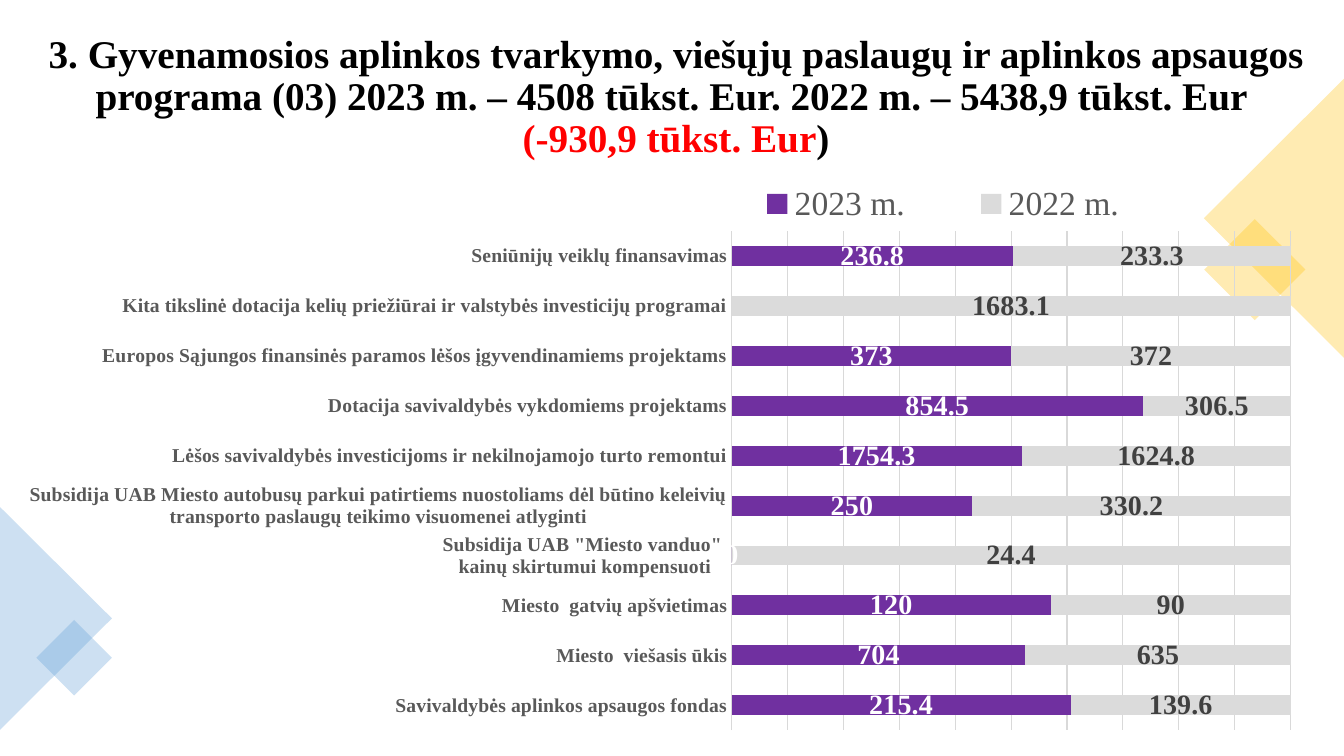
import pptx
import pptx.chart.data
import pptx.dml.color
import pptx.enum.chart
import pptx.enum.shapes
import pptx.enum.text
import pptx.oxml
import pptx.oxml.ns
import pptx.util
from pptx.util import Inches

FACE = "Times New Roman"
GOLD, BLUE = "FFC000", "5B9BD5"
GRID, GREY = "D9D9D9", "595959"
SHAPE = pptx.enum.shapes.MSO_SHAPE

# category, 2023, 2022, from the bottom bar up
ROWS = [
    ("Savivaldybės aplinkos apsaugos fondas", 215.4, 139.6),
    ("Miesto  viešasis ūkis", 704, 635),
    ("Miesto  gatvių apšvietimas", 120, 90),
    ('Subsidija UAB "Miesto vanduo" \nkainų skirtumui kompensuoti', 0, 24.4),
    ("Subsidija UAB Miesto autobusų parkui patirtiems nuostoliams dėl būtino "
     "keleivių transporto paslaugų teikimo visuomenei atlyginti", 250, 330.2),
    ("Lėšos savivaldybės investicijoms ir nekilnojamojo turto remontui",
     1754.3, 1624.8),
    ("Dotacija savivaldybės vykdomiems projektams", 854.5, 306.5),
    ("Europos Sąjungos finansinės paramos lėšos įgyvendinamiems projektams",
     373, 372),
    ("Kita tikslinė dotacija kelių priežiūrai ir valstybės investicijų programai",
     None, 1683.1),
    ("Seniūnijų veiklų finansavimas", 236.8, 233.3),
]
# name, bar colour, label colour
YEARS = [("2023 m. ", "7030A0", "FFFFFF"), ("2022 m. ", "DBDBDB", "404040")]

# shape, left, top, width, height, rotation, colour
DECOR = [
    (SHAPE.RECTANGLE, 12.09, 2.32, 0.71, 0.71, 45, GOLD),
    (SHAPE.ISOSCELES_TRIANGLE, 11.25, 1.47, 2.77, 1.39, 270, GOLD),
    (SHAPE.ISOSCELES_TRIANGLE, -0.55, 5.58, 2.21, 1.11, 90, BLUE),
    (SHAPE.RECTANGLE, 0.47, 6.26, 0.53, 0.53, 45, BLUE),
]


def rgb(code):
    return pptx.dml.color.RGBColor.from_string(code)


def style(font, size, color, bold=False):
    font.name, font.size, font.bold = FACE, pptx.util.Pt(size), bold
    font.color.rgb = rgb(color)


def write(para, text, size=28, color="000000", bold=True):
    run = para.add_run()
    run.text = text
    style(run.font, size, color, bold)


def add_title(slide):
    title = slide.shapes.title
    title.left, title.top = Inches(0.36), Inches(0.35)
    title.width, title.height = Inches(12.69), Inches(1.24)
    frame = title.text_frame
    frame.word_wrap = True
    frame.auto_size = pptx.enum.text.MSO_AUTO_SIZE.NONE
    frame.vertical_anchor = pptx.enum.text.MSO_ANCHOR.MIDDLE
    para = frame.paragraphs[0]
    para.alignment = pptx.enum.text.PP_ALIGN.CENTER
    para.line_spacing = 0.9
    write(para, "3. Gyvenamosios aplinkos tvarkymo, viešųjų paslaugų ir aplinkos "
                "apsaugos programa (03) 2023 m. – 4508 tūkst. Eur. "
                "2022 m. – 5438,9 tūkst. Eur ")
    para.add_line_break()
    write(para, "(-930,9 tūkst. Eur", color="FF0000")
    write(para, ")")


def add_decor(slide, kind, left, top, width, height, turn, color):
    shape = slide.shapes.add_shape(
        kind, Inches(left), Inches(top), Inches(width), Inches(height))
    shape.rotation = turn
    shape.shadow.inherit = False
    shape.line.fill.background()
    shape.fill.solid()
    shape.fill.fore_color.rgb = rgb(color)
    tint = shape.fill._xPr.find(".//" + pptx.oxml.ns.qn("a:srgbClr"))
    alpha = pptx.oxml.parse_xml(
        f'<a:alpha {pptx.oxml.ns.nsdecls("a")} val="30000"/>')
    tint.append(alpha)


def place(node, index, x, y, w, h, inner=False):
    """Fix a chart part at fractions of the chart's size."""
    for old in node.findall(pptx.oxml.ns.qn("c:layout")):
        node.remove(old)
    target = '<c:layoutTarget val="inner"/>' if inner else ""
    sizes = "".join(f'<c:{key} val="{val}"/>'
                    for key, val in zip("xywh", (x, y, w, h)))
    node.insert(index, pptx.oxml.parse_xml(
        f'<c:layout {pptx.oxml.ns.nsdecls("c")}><c:manualLayout>{target}'
        f'<c:xMode val="edge"/><c:yMode val="edge"/>{sizes}'
        '</c:manualLayout></c:layout>'))


def set_line(line, color, width=0.75):
    line.color.rgb = rgb(color)
    line.width = pptx.util.Pt(width)


def add_bars(slide):
    enum = pptx.enum.chart
    names, *values = zip(*ROWS)
    data = pptx.chart.data.CategoryChartData()
    data.categories = names
    for (year, _, _), nums in zip(YEARS, values):
        data.add_series(year, nums)
    chart = slide.shapes.add_chart(
        enum.XL_CHART_TYPE.BAR_STACKED_100, Inches(0), Inches(1.59),
        Inches(13.05), Inches(5.77), data).chart
    style(chart.font, 10, "000000")
    chart.has_title = False

    chart.has_legend = True
    legend = chart.legend
    legend.position = enum.XL_LEGEND_POSITION.TOP
    legend.include_in_layout = False
    style(legend.font, 24, GREY)
    place(legend._element, 1, 0.54, 0.03, 0.36, 0.09)
    place(chart._chartSpace.chart.plotArea, 0, 0.556, 0.122, 0.425, 0.858, True)

    axis = chart.category_axis
    axis.major_tick_mark = enum.XL_TICK_MARK.NONE
    style(axis.tick_labels.font, 14, GREY, True)
    set_line(axis.format.line, GRID)
    scale = chart.value_axis
    scale.visible = False
    scale.has_major_gridlines = True
    set_line(scale.major_gridlines.format.line, GRID)

    plot = chart.plots[0]
    plot.gap_width, plot.overlap = 150, 100
    plot.vary_by_categories = False
    for series, (_, fill, ink) in zip(plot.series, YEARS):
        series.format.fill.solid()
        series.format.fill.fore_color.rgb = rgb(fill)
        labels = series.data_labels
        labels.show_value = True
        labels.position = enum.XL_LABEL_POSITION.CENTER
        style(labels.font, 20, ink, True)


def main():
    deck = pptx.Presentation()
    deck.slide_width, deck.slide_height = Inches(13.33), Inches(7.5)
    slide = deck.slides.add_slide(deck.slide_layouts[5])
    add_title(slide)
    for item in DECOR:
        add_decor(slide, *item)
    add_bars(slide)
    deck.save("out.pptx")


if __name__ == "__main__":
    main()
